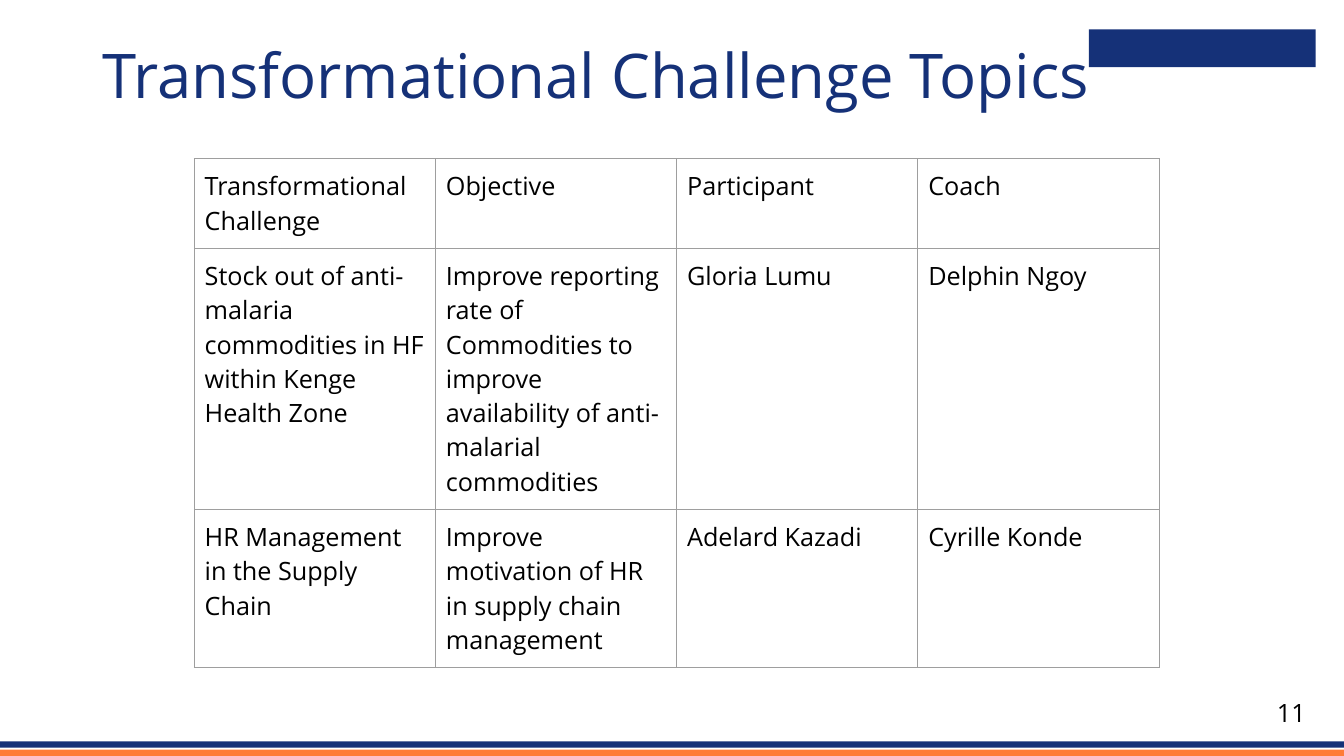
from lxml import etree
from pptx import Presentation
from pptx.dml.color import RGBColor
from pptx.enum.shapes import MSO_SHAPE
from pptx.enum.text import MSO_ANCHOR, MSO_AUTO_SIZE, PP_ALIGN
from pptx.oxml.ns import qn
from pptx.util import Pt

RECTANGLE = MSO_SHAPE.RECTANGLE
LEFT, RIGHT = PP_ALIGN.LEFT, PP_ALIGN.RIGHT
TOP, NO_AUTOFIT = MSO_ANCHOR.TOP, MSO_AUTO_SIZE.NONE

EMU_PER_PX = 9525
FONT = "Open Sans"
NAVY, ORANGE, BLACK, GRID = "153178", "FF7B38", "000000", "9E9E9E"

TOPICS = [
    ["Transformational Challenge", "Objective", "Participant", "Coach"],
    ["Stock out of anti-malaria commodities in HF within Kenge Health Zone",
     "Improve reporting rate of Commodities to improve availability of "
     "anti-malarial commodities",
     "Gloria Lumu", "Delphin Ngoy"],
    ["HR Management in the Supply Chain",
     "Improve motivation of HR in supply chain management",
     "Adelard Kazadi", "Cyrille Konde"],
]
TABLE_WIDTH = 919
ROW_HEIGHTS = [84, 248, 150]
CELL_INSET = 10


def px(*lengths):
    return [length * EMU_PER_PX for length in lengths]


def color(hex_value):
    return RGBColor.from_string(hex_value)


def write(frame, text, size=18, ink=BLACK, align=LEFT, spacing=None):
    frame.word_wrap = True
    paragraph = frame.paragraphs[0]
    paragraph.alignment = align
    paragraph.line_spacing = spacing
    run = paragraph.add_run()
    run.text = text
    run.font.name = FONT
    run.font.size = Pt(size)
    run.font.color.rgb = color(ink)


def add_block(slide, box, fill):
    block = slide.shapes.add_shape(RECTANGLE, *px(*box))
    block.shadow.inherit = False
    block.fill.solid()
    block.fill.fore_color.rgb = color(fill)
    block.line.fill.background()


def add_title(slide, text):
    title = slide.shapes.title
    title.left, title.top, title.width, title.height = px(88, 38, 1104, 139)
    title.text_frame.vertical_anchor = TOP
    title.text_frame.auto_size = NO_AUTOFIT
    write(title.text_frame, text, size=44, ink=NAVY, spacing=0.9)


def add_page_number(slide, number):
    page_number = slide.shapes.add_textbox(*px(965, 659, 288, 38))
    write(page_number.text_frame, number, align=RIGHT)


def outline_cell(cell):
    properties = cell._tc.get_or_add_tcPr()
    for side in ("lnL", "lnR", "lnT", "lnB"):
        edge = etree.SubElement(properties, qn(f"a:{side}"), w=str(Pt(0.75)))
        fill = etree.SubElement(edge, qn("a:solidFill"))
        etree.SubElement(fill, qn("a:srgbClr"), val=GRID)


def add_topic_table(slide):
    box = px(185, 151, TABLE_WIDTH, sum(ROW_HEIGHTS))
    table = slide.shapes.add_table(len(TOPICS), len(TOPICS[0]), *box).table
    table.first_row = table.horz_banding = False
    for row, height in zip(table.rows, px(*ROW_HEIGHTS)):
        row.height = height
    inset = CELL_INSET * EMU_PER_PX
    for cell, text in zip(table.iter_cells(), sum(TOPICS, [])):
        outline_cell(cell)
        cell.fill.background()
        cell.margin_left = cell.margin_right = inset
        cell.margin_top = cell.margin_bottom = inset
        write(cell.text_frame, text)


def main():
    presentation = Presentation()
    presentation.slide_width, presentation.slide_height = px(1280, 720)
    slide = presentation.slides.add_slide(presentation.slide_layouts[5])

    # Footer stripes
    for top, fill in ((714, ORANGE), (706, NAVY)):
        add_block(slide, (0, top, 1280, 6), fill)

    # Header with a plain corner panel
    add_block(slide, (1037, 28, 216, 36), NAVY)
    add_title(slide, "Transformational Challenge Topics")

    # Content and page number
    add_topic_table(slide)
    add_page_number(slide, "11")

    presentation.save("out.pptx")


if __name__ == "__main__":
    main()
